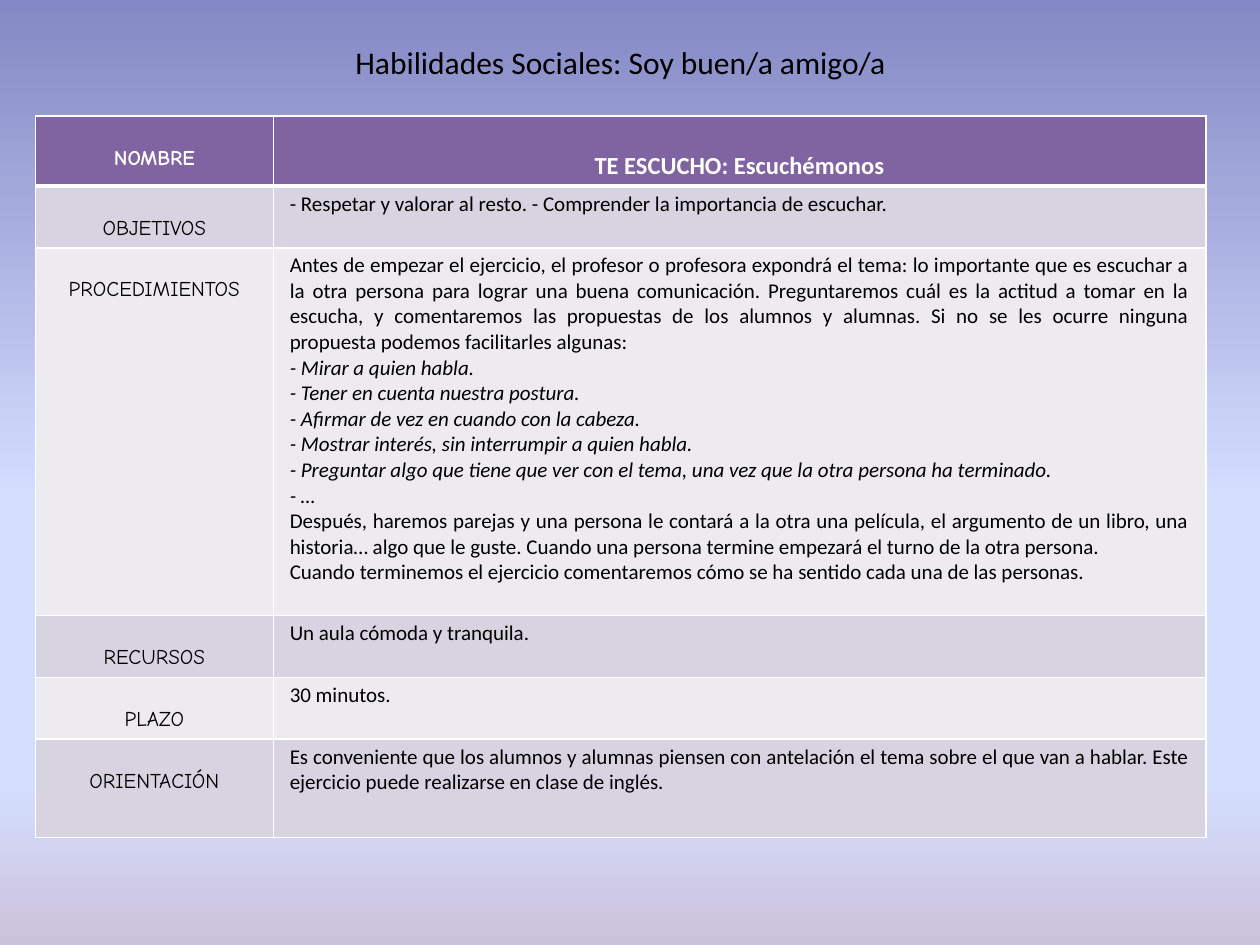
from lxml import etree
from pptx import Presentation
from pptx.dml.color import RGBColor
from pptx.enum import text
from pptx.oxml import ns
from pptx.util import Inches, Pt

# Content
TITLE = "Habilidades Sociales: Soy buen/a amigo/a"
HEADER = ("NOMBRE", "TE ESCUCHO: Escuchémonos")
# Each row: label, paragraphs; those starting with "*" are italic
ROWS = [
    ("OBJETIVOS", ["- Respetar y valorar al resto. - Comprender la importancia de escuchar."]),
    ("PROCEDIMIENTOS", [
        "Antes de empezar el ejercicio, el profesor o profesora expondrá el tema: lo importante "
        "que es escuchar a la otra persona para lograr una buena comunicación. Preguntaremos cuál "
        "es la actitud a tomar en la escucha, y comentaremos las propuestas de los alumnos y "
        "alumnas. Si no se les ocurre ninguna propuesta podemos facilitarles algunas:",
        "*- Mirar a quien habla.",
        "*- Tener en cuenta nuestra postura.",
        "*- Afirmar de vez en cuando con la cabeza.",
        "*- Mostrar interés, sin interrumpir a quien habla.",
        "*- Preguntar algo que tiene que ver con el tema, una vez que la otra persona ha terminado.",
        "*- …",
        "Después, haremos parejas y una persona le contará a la otra una película, el argumento de "
        "un libro, una historia… algo que le guste. Cuando una persona termine empezará el turno "
        "de la otra persona.",
        "Cuando terminemos el ejercicio comentaremos cómo se ha sentido cada una de las personas.",
    ]),
    ("RECURSOS", ["Un aula cómoda y tranquila."]),
    ("PLAZO", ["30 minutos."]),
    ("ORIENTACIÓN", [
        "Es conveniente que los alumnos y alumnas piensen con antelación el tema sobre el que van "
        "a hablar. Este ejercicio puede realizarse en clase de inglés.",
    ]),
]
COLUMN_WIDTHS = [1.89, 7.4]
ROW_HEIGHTS = [0.55, 0.49, 2.92, 0.49, 0.49, 0.78]

THEME = {
    "body_font": "Calibri", "label_font": "Comic Neue",
    "title_size": 18, "header_size": 14, "body_size": 12,
    "ink": "000000", "white": "FFFFFF", "header_fill": "8064A2",
    "bands": ["D8D3E0", "EDEAF0"],
    "background": [(0, "8488C4"), (53, "D4DEFF"), (83, "D4DEFF"), (100, "CCC1DA")],
}
ALIGN = text.PP_ALIGN


def write(frame, paragraphs, size=THEME["body_size"], font=THEME["body_font"],
          color=THEME["ink"], bold=False, align=ALIGN.LEFT):
    for index, line in enumerate(paragraphs):
        paragraph = frame.paragraphs[0] if index == 0 else frame.add_paragraph()
        paragraph.alignment = align
        run = paragraph.add_run()
        run.text = line.removeprefix("*")
        run.font.name, run.font.size, run.font.bold = font, Pt(size), bold
        run.font.italic = line.startswith("*")
        run.font.color.rgb = RGBColor.from_string(color)


def add_color(parent, color):
    etree.SubElement(parent, ns.qn("a:srgbClr"), val=color)


def format_cell(cell, fill, top=0.04, bottom_border=1):
    cell.margin_left = cell.margin_right = Inches(0.13)
    cell.margin_top, cell.margin_bottom = Inches(top), Inches(0.04)
    properties = cell._tc.get_or_add_tcPr()
    for side, width in (("L", 1), ("R", 1), ("T", 1), ("B", bottom_border)):
        line = etree.SubElement(properties, ns.qn(f"a:ln{side}"), w=str(Pt(width)))
        add_color(etree.SubElement(line, ns.qn("a:solidFill")), THEME["white"])
    cell.fill.solid()
    cell.fill.fore_color.rgb = RGBColor.from_string(fill)


def set_background(slide):
    fill = slide.background.fill
    fill.gradient()
    fill.gradient_angle = 270
    stops = next(slide._element.iter(ns.qn("a:gsLst")))
    for stop in list(stops):
        stops.remove(stop)
    for position, color in THEME["background"]:
        add_color(etree.SubElement(stops, ns.qn("a:gs"), pos=str(position * 1000)), color)


def add_title(slide):
    title = slide.shapes.title
    title.left, title.top = Inches(2.72), Inches(0.29)
    title.width, title.height = Inches(4.8), Inches(0.4)
    title.text_frame.vertical_anchor = text.MSO_ANCHOR.TOP
    title.text_frame.auto_size = text.MSO_AUTO_SIZE.NONE
    write(title.text_frame, [TITLE], size=THEME["title_size"])


def add_activity_table(slide):
    table = slide.shapes.add_table(
        len(ROWS) + 1, 2, Inches(0.28), Inches(0.92),
        Inches(sum(COLUMN_WIDTHS)), Inches(sum(ROW_HEIGHTS))).table
    for column, width in zip(table.columns, COLUMN_WIDTHS):
        column.width = Inches(width)
    for row, height in zip(table.rows, ROW_HEIGHTS):
        row.height = Inches(height)

    # Header row
    label_style = {"font": THEME["label_font"], "align": ALIGN.CENTER}
    header_styles = [label_style,
                     {"size": THEME["header_size"], "align": ALIGN.CENTER}]
    for column, (words, style, top) in enumerate(zip(HEADER, header_styles, (0.24, 0.28))):
        cell = table.cell(0, column)
        format_cell(cell, THEME["header_fill"], top=top, bottom_border=3)
        write(cell.text_frame, [words], color=THEME["white"], bold=True, **style)

    # Banded rows
    for index, (label, paragraphs) in enumerate(ROWS):
        fill = THEME["bands"][index % 2]
        label_cell, body_cell = table.cell(index + 1, 0), table.cell(index + 1, 1)
        format_cell(label_cell, fill, top=0.24)
        write(label_cell.text_frame, [label], **label_style)
        format_cell(body_cell, fill)
        write(body_cell.text_frame, paragraphs, align=ALIGN.JUSTIFY)


def main():
    presentation = Presentation()
    presentation.slide_width, presentation.slide_height = Inches(10), Inches(7.5)
    slide = presentation.slides.add_slide(presentation.slide_layouts[5])
    set_background(slide)
    add_activity_table(slide)
    add_title(slide)
    presentation.save("out.pptx")


if __name__ == "__main__":
    main()
